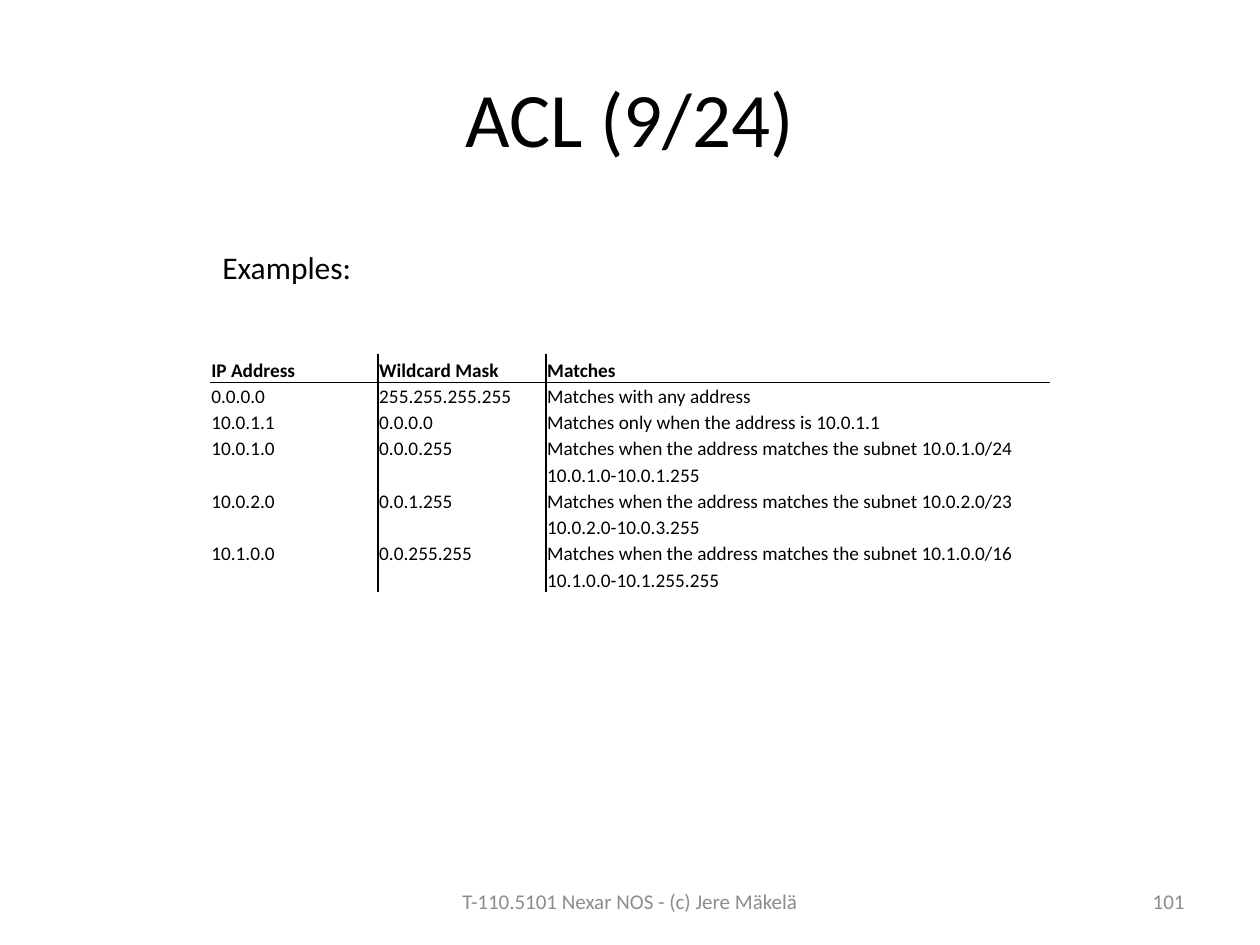
import lxml.etree
import pptx
import pptx.dml.color
import pptx.enum.text
import pptx.oxml.ns
import pptx.util

Pt = pptx.util.Pt
qn = pptx.oxml.ns.qn
ALIGN = pptx.enum.text.PP_ALIGN
ANCHOR = pptx.enum.text.MSO_ANCHOR

# Content: each table row lists (text, columns spanned) for its three fields
TITLE = "ACL (9/24)"
INTRO = "Examples:"
FOOTER = "T-110.5101 Nexar NOS - (c) Jere Mäkelä"
NUMBER = "101"
ROWS = [
    [("IP Address", 2), ("Wildcard Mask", 2), ("Matches", 1)],
    [("0.0.0.0", 1), ("255.255.255.255", 2), ("Matches with any address", 3)],
    [("10.0.1.1", 1), ("0.0.0.0", 1), ("Matches only when the address is 10.0.1.1", 5)],
    [("10.0.1.0", 1), ("0.0.0.255", 1),
     ("Matches when the address matches the subnet 10.0.1.0/24", 6)],
    [("", 1), ("", 1), ("10.0.1.0-10.0.1.255", 2)],
    [("10.0.2.0", 1), ("0.0.1.255", 1),
     ("Matches when the address matches the subnet 10.0.2.0/23", 6)],
    [("", 1), ("", 1), ("10.0.2.0-10.0.3.255", 2)],
    [("10.1.0.0", 1), ("0.0.255.255", 2),
     ("Matches when the address matches the subnet 10.1.0.0/16", 6)],
    [("", 1), ("", 1), ("10.1.0.0-10.1.255.255", 3)],
]
FIELD_STARTS = (0, 2, 4)
COLUMNS = 10

THEME = {
    "font": "Calibri", "ink": "000000", "muted": "8C8C8C",
    "title": 44, "intro": 18, "cell": 11, "footer": 12, "rule": 1,
}


def write(tf, text, size, color=THEME["ink"], align=ALIGN.LEFT, bold=False):
    tf.text = text
    p = tf.paragraphs[0]
    p.alignment = align
    for r in p.runs:
        r.font.name = THEME["font"]
        r.font.size = Pt(size)
        r.font.bold = bold
        r.font.color.rgb = pptx.dml.color.RGBColor.from_string(color)
    if not text:  # keeps an empty cell as low as a filled one
        lxml.etree.SubElement(p._p, qn("a:endParaRPr"), sz=str(size * 100))


def add_text(s, box, text, size, wrap=True, anchor=ANCHOR.MIDDLE, **style):
    tf = s.shapes.add_textbox(*map(Pt, box)).text_frame
    tf.word_wrap = wrap
    tf.vertical_anchor = anchor
    write(tf, text, size, **style)
    return tf


def set_borders(cell, visible):
    tc_pr = cell._tc.get_or_add_tcPr()
    for i, side in enumerate("LRTB"):
        ln = lxml.etree.Element(qn("a:ln" + side), w=str(Pt(THEME["rule"])))
        if side in visible:
            fill = lxml.etree.SubElement(ln, qn("a:solidFill"))
            lxml.etree.SubElement(fill, qn("a:srgbClr"), val=THEME["ink"])
        else:
            lxml.etree.SubElement(ln, qn("a:noFill"))
        tc_pr.insert(i, ln)


def add_acl_table(s, left, top, col_width, header_height, row_height):
    height = header_height + row_height * (len(ROWS) - 1)
    table = s.shapes.add_table(len(ROWS), COLUMNS, Pt(left), Pt(top),
                               Pt(col_width * COLUMNS), Pt(height)).table
    table.first_row = table.horz_banding = False
    for col in table.columns:
        col.width = Pt(col_width)
    for r, fields in enumerate(ROWS):
        table.rows[r].height = Pt(row_height if r else header_height)
        placed = dict(zip(FIELD_STARTS, fields))
        for c in range(COLUMNS):
            text, span = placed.get(c, ("", 1))
            cell = table.cell(r, c)
            if span > 1:
                cell.merge(table.cell(r, c + span - 1))
            write(cell.text_frame, text, THEME["cell"], bold=r == 0)
            cell.vertical_anchor = ANCHOR.BOTTOM
            cell.margin_left = cell.margin_right = cell.margin_top = Pt(0.75)
            cell.margin_bottom = 0
            cell.fill.background()
            # Rules run between the fields and under the header
            sides = {"L": c in FIELD_STARTS[1:], "R": c + span in FIELD_STARTS[1:],
                     "T": r == 1, "B": r == 0}
            set_borders(cell, [side for side, on in sides.items() if on])


def main():
    prs = pptx.Presentation()
    prs.slide_width, prs.slide_height = Pt(720), Pt(540)
    s = prs.slides.add_slide(prs.slide_layouts[5])

    # Title
    title = s.shapes.title
    title.left, title.top, title.width, title.height = map(Pt, (36, 21.6, 648, 90))
    title.text_frame.vertical_anchor = ANCHOR.MIDDLE
    write(title.text_frame, TITLE, THEME["title"], align=ALIGN.CENTER)

    # Examples
    add_acl_table(s, left=120, top=202.5, col_width=48, header_height=16, row_height=15)
    intro = add_text(s, (120, 138, 89, 29), INTRO, THEME["intro"],
                     wrap=False, anchor=ANCHOR.TOP)
    intro.auto_size = pptx.enum.text.MSO_AUTO_SIZE.SHAPE_TO_FIT_TEXT

    # Footer and slide number
    add_text(s, (246, 500.5, 228, 28.75), FOOTER, THEME["footer"],
             color=THEME["muted"], align=ALIGN.CENTER)
    add_text(s, (516, 500.5, 168, 28.75), NUMBER, THEME["footer"],
             color=THEME["muted"], align=ALIGN.RIGHT)

    prs.save("out.pptx")


if __name__ == "__main__":
    main()
